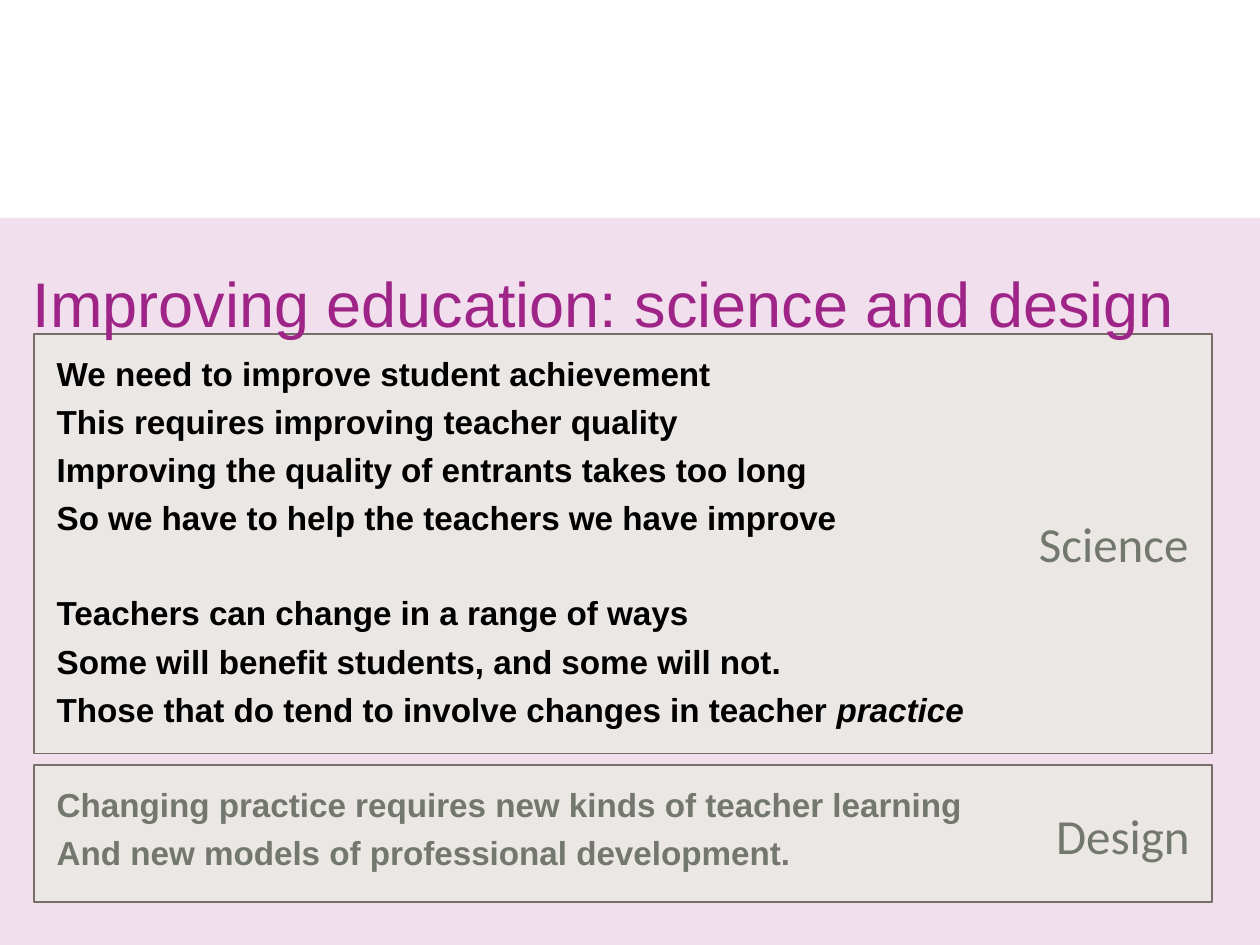
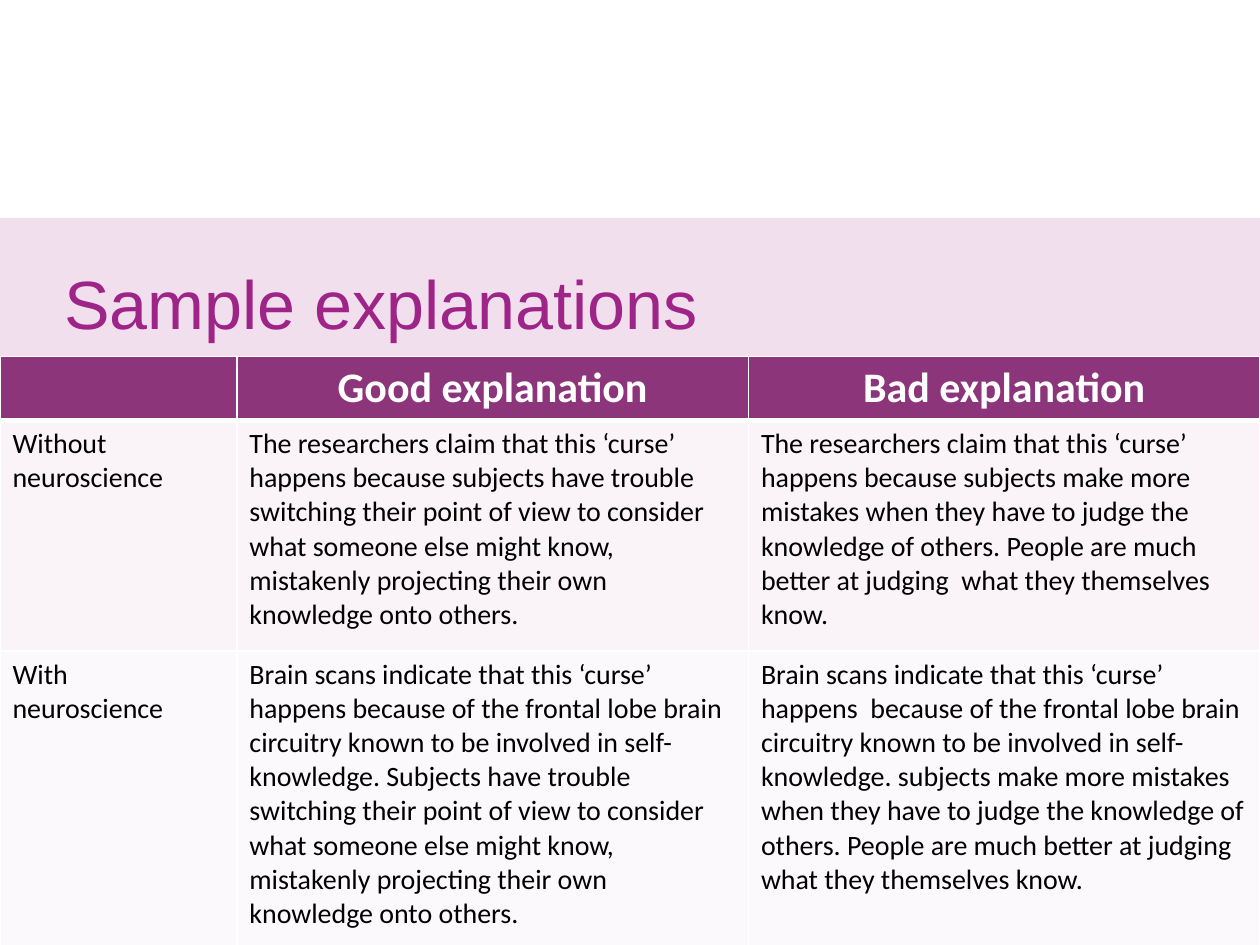
from lxml.etree import SubElement
from pptx import Presentation
from pptx.dml.color import RGBColor
from pptx.enum.shapes import MSO_SHAPE as Shape
from pptx.enum.text import MSO_ANCHOR as Anchor, MSO_AUTO_SIZE as AutoSize, PP_ALIGN as Align
from pptx.oxml.ns import qn
from pptx.util import Pt

PX = 9144  # EMU in one px, at 100 px to the inch
SLIDE_WIDTH, SLIDE_HEIGHT = 1000, 750
BAND_TOP = 173

BLACK, WHITE = "000000", "FFFFFF"
BAND, TITLE = "F1DFED", "9E2487"
PANEL, PANEL_LINE, PANEL_TEXT = "E6EFDC", "786E69", "73786E"
HEADER_FILL, ROW_FILLS = "8C357B", ("FAF3F8", "FCF9FC")

TITLE_FONT = {"name": "Arial", "bold": False}
BODY_FONT = {"name": "Arial", "size": Pt(19), "bold": True}
LABEL_FONT = {"name": "Calibri", "size": Pt(28)}
HEADER_FONT = {"name": "Calibri", "size": Pt(24), "bold": True}
CELL_FONT = {"name": "Calibri", "size": Pt(16), "bold": False}

LINE_GAP, GROUP_GAP = 4.8, 31.5  # points before a line, and before a new group of lines

ARGUMENT = [
    ["We need to improve student achievement",
     "This requires improving teacher quality",
     "Improving the quality of entrants takes too long",
     "So we have to help the teachers we have improve"],
    ["Teachers can change in a range of ways",
     "Some will benefit students, and some will not.",
     "Those that do tend to involve changes in teacher *practice"],
    ["Changing practice requires new kinds of teacher learning",
     "And new models of professional development."],
]

EXPLANATIONS = [
    ["", "Good explanation", "Bad explanation"],
    ["Without neuroscience",
     "The researchers claim that this ‘curse’ happens because subjects have trouble "
     "switching their point of view to consider what someone else might know, "
     "mistakenly projecting their own knowledge onto others.",
     "The researchers claim that this ‘curse’ happens because subjects make more "
     "mistakes when they have to judge the knowledge of others. People are much "
     "better at judging  what they themselves know."],
    ["With neuroscience",
     "Brain scans indicate that this ‘curse’ happens because of the frontal lobe brain "
     "circuitry known to be involved in self-knowledge. Subjects have trouble "
     "switching their point of view to consider what someone else might know, "
     "mistakenly projecting their own knowledge onto others.",
     "Brain scans indicate that this ‘curse’ happens  because of the frontal lobe brain "
     "circuitry known to be involved in self-knowledge. subjects make more mistakes "
     "when they have to judge the knowledge of others. People are much better at "
     "judging  what they themselves know."],
]


def rgb(color):
    return RGBColor.from_string(color)


def emu(*lengths):
    return [length * PX for length in lengths]


def apply(target, values):
    for name, value in values.items():
        setattr(target, name, value)


def style_font(font, values, color):
    apply(font, values)
    font.color.rgb = rgb(color)


class Deck:
    """Holds the presentation, its shared style and the current slide."""

    def __init__(self):
        self.presentation = Presentation()
        apply(self.presentation, {"slide_width": SLIDE_WIDTH * PX,
                                  "slide_height": SLIDE_HEIGHT * PX})
        self.slide = None

    def add_slide(self, layout):
        first = self.slide is None
        self.slide = self.presentation.slides.add_slide(self.presentation.slide_layouts[layout])
        if first:
            self.add_band()

    def add_band(self):
        """Put the tinted area on the slide master, behind everything."""
        band = self.add_rectangle(self.slide.shapes,
                                  (0, BAND_TOP, SLIDE_WIDTH, SLIDE_HEIGHT - BAND_TOP), BAND)
        band.line.fill.background()
        band._element.nvSpPr.cNvPr.set("id", "20")
        self.presentation.slide_master.shapes[0]._element.addprevious(band._element)

    def add_rectangle(self, shapes, box, fill):
        shape = shapes.add_shape(Shape.RECTANGLE, *emu(*box))
        shape.shadow.inherit = False
        shape.fill.solid()
        shape.fill.fore_color.rgb = rgb(fill)
        return shape

    def place(self, placeholder, box, anchor):
        """Move a placeholder and take away its insets; give back its text frame."""
        apply(placeholder, dict(zip(("left", "top", "width", "height"), emu(*box))))
        frame = placeholder.text_frame
        apply(frame, {"margin_left": 0, "margin_top": 0, "margin_right": 0, "margin_bottom": 0,
                      "word_wrap": True, "auto_size": AutoSize.NONE, "vertical_anchor": anchor})
        return frame

    def add_title(self, text, left, width, size):
        frame = self.place(self.slide.shapes.title, (left, 205, width, 70), Anchor.MIDDLE)
        paragraph = frame.paragraphs[0]
        paragraph.text = text
        paragraph.alignment = Align.LEFT
        style_font(paragraph.font, {**TITLE_FONT, "size": Pt(size)}, TITLE)

    def add_body(self, groups, box):
        """Fill the body with groups of lines; words after a * are italic."""
        frame = self.place(self.slide.placeholders[1], box, Anchor.TOP)
        paragraph = frame.paragraphs[0]
        space = 0
        for group in groups:
            for line in group:
                if space:
                    paragraph = frame.add_paragraph()
                properties = paragraph._p.get_or_add_pPr()
                properties.set("marL", "0")
                properties.set("indent", "0")
                SubElement(properties, qn("a:buNone"))
                apply(paragraph, {"space_before": Pt(space), "line_spacing": 1.0,
                                  "alignment": Align.LEFT})
                for index, part in enumerate(line.split("*")):
                    run = paragraph.add_run()
                    run.text = part
                    style_font(run.font, {**BODY_FONT, "italic": index > 0}, BLACK)
                space = LINE_GAP
            space = GROUP_GAP

    def add_panel(self, label, box, label_box, behind=False):
        """Draw a half-transparent panel with a label at its right."""
        group = self.slide.shapes.add_group_shape()
        panel = self.add_rectangle(group.shapes, box, PANEL)
        color = panel.fill._xPr.find(".//" + qn("a:srgbClr"))
        SubElement(color, qn("a:alpha"), val="50000")
        panel.line.color.rgb = rgb(PANEL_LINE)
        panel.line.width = Pt(1)
        frame = group.shapes.add_textbox(*emu(*label_box)).text_frame
        apply(frame, {"word_wrap": True, "auto_size": AutoSize.SHAPE_TO_FIT_TEXT})
        paragraph = frame.paragraphs[0]
        paragraph.text = label
        paragraph.alignment = Align.RIGHT
        style_font(paragraph.font, LABEL_FONT, PANEL_TEXT)
        if behind:
            self.slide.shapes.title._element.addprevious(group._element)

    def add_cell_borders(self, cell, widths):
        properties = cell._tc.get_or_add_tcPr()
        for side, width in widths.items():
            line = SubElement(properties, qn("a:ln" + side), w=str(Pt(width)))
            SubElement(SubElement(line, qn("a:solidFill")), qn("a:srgbClr"), val=WHITE)

    def add_table(self, rows, left, top, widths, heights):
        table = self.slide.shapes.add_table(
            len(rows), len(widths), *emu(left, top, sum(widths), sum(heights))).table
        apply(table, {"first_row": False, "horz_banding": False})
        for column, width in zip(table.columns, widths):
            column.width = width * PX
        for index, (row, height) in enumerate(zip(rows, heights)):
            table.rows[index].height = height * PX
            header = index == 0
            for cell, text in zip(table.rows[index].cells, row):
                self.add_cell_borders(cell, {"L": 1, "R": 1, "T": 3 if index == 1 else 1,
                                             "B": 3 if header else 1})
                cell.fill.solid()
                cell.fill.fore_color.rgb = rgb(HEADER_FILL if header else ROW_FILLS[index - 1])
                paragraph = cell.text_frame.paragraphs[0]
                paragraph.text = text
                paragraph.alignment = Align.CENTER if header else Align.LEFT
                style_font(paragraph.font, HEADER_FONT if header else CELL_FONT,
                           WHITE if header else BLACK)


def main():
    deck = Deck()

    deck.add_slide(1)
    deck.add_panel("Science", (27, 265, 935, 333), (785, 403, 168, 57), behind=True)
    deck.add_title("Improving education: science and design", 26, 974, 36)
    deck.add_body(ARGUMENT, (45, 280, 734, 443))
    deck.add_panel("Design", (27, 607, 935, 109), (787, 634, 167, 57))

    deck.add_slide(5)
    deck.add_title("Sample explanations", 51, 914, 39)
    deck.add_table(EXPLANATIONS, 0, 283, (188, 406, 406), (44, 183, 240))

    deck.presentation.save("out.pptx")


if __name__ == "__main__":
    main()
